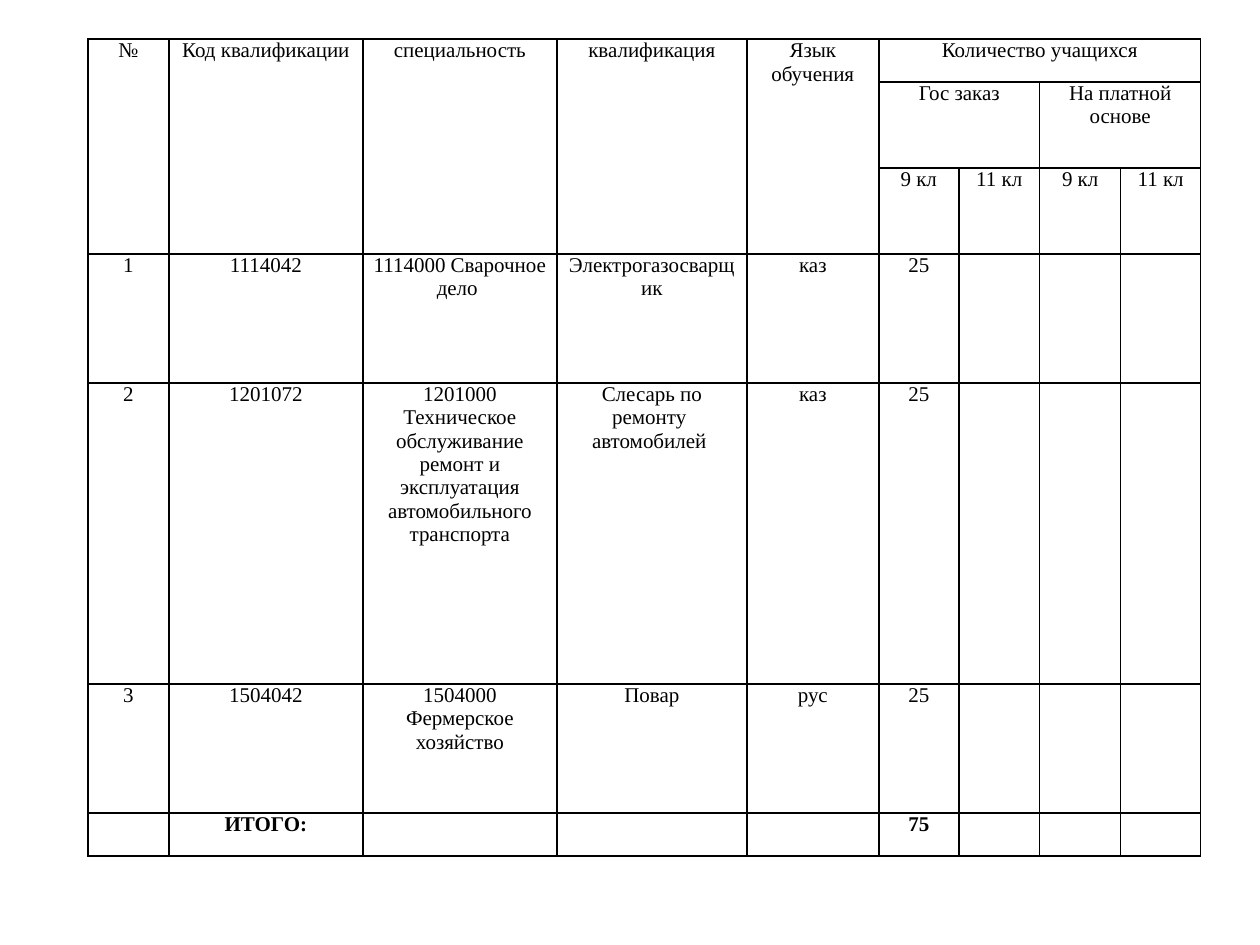
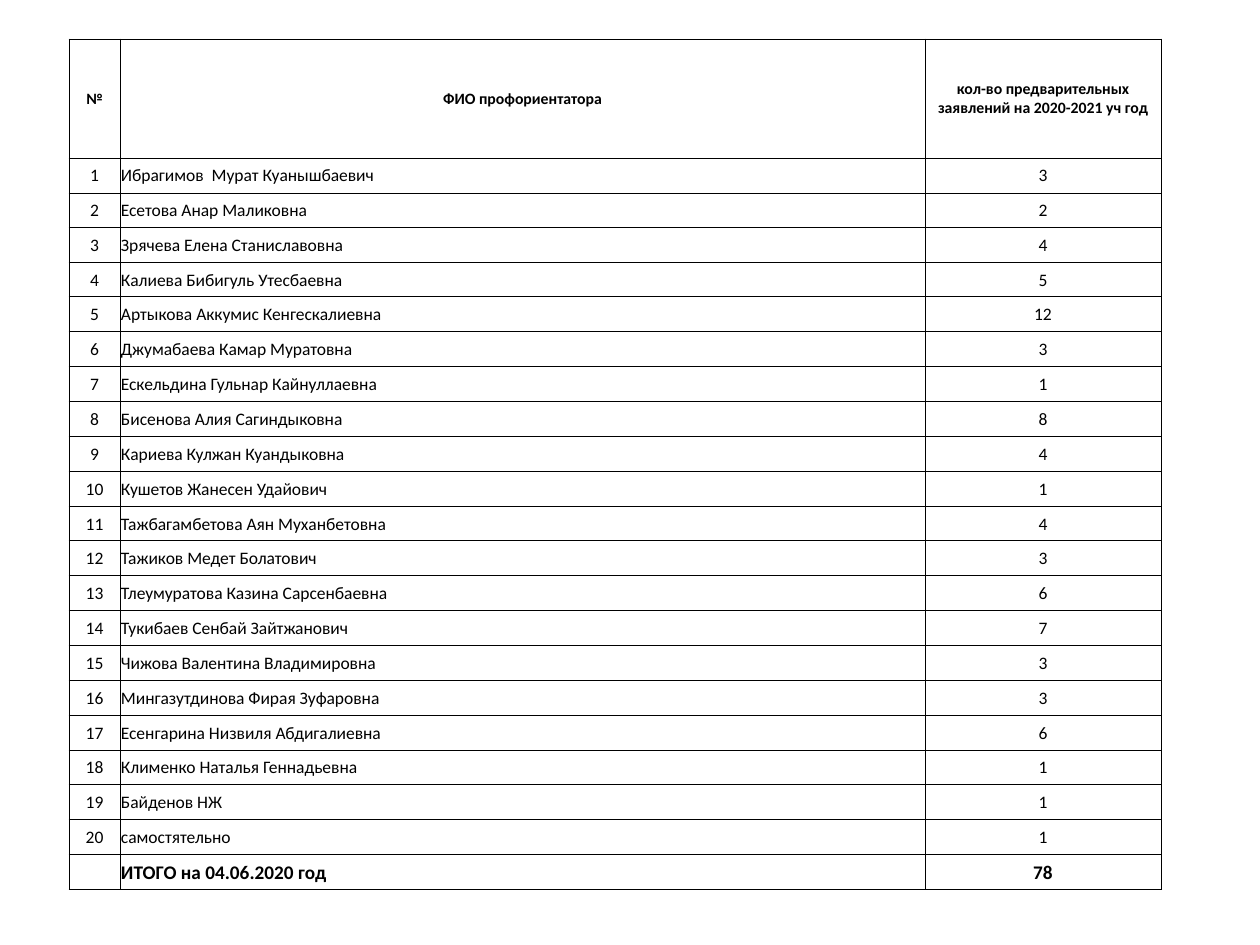
from itertools import product

from lxml.etree import SubElement
from pptx import Presentation
from pptx.dml.color import RGBColor
from pptx.enum.text import MSO_ANCHOR as ANCHOR, PP_ALIGN as ALIGN
from pptx.oxml.ns import qn
from pptx.util import Emu, Pt

SLIDE_W, SLIDE_H = 1260, 945
BLACK, WHITE = "000000", "FFFFFF"

PLAN_BOX = (88, 39, 1113, 817)
PLAN_COLS = [81, 194, 194, 190, 132]
PLAN_ROWS = [43, 86, 86, 129, 301, 129, 43]
PLAN_MERGES = [(0, c, 2, c) for c in range(5)] + [
    (0, 5, 0, 8), (1, 5, 1, 6), (1, 7, 1, 8)]
PLAN = [
    ["№", "Код квалификации", "специальность", "квалификация",
     "Язык обучения", "Количество учащихся"],
    ["", "", "", "", "", "Гос заказ", "", "На платной основе"],
    ["", "", "", "", "", "9 кл", "11 кл", "9 кл", "11 кл"],
    ["1", "1114042", "1114000 Сварочное дело ", "Электрогазосварщик",
     "каз", "25"],
    ["2", "1201072",
     "1201000 Техническое обслуживание\n"
     "ремонт и эксплуатация автомобильного транспорта",
     "Слесарь по ремонту \nавтомобилей ", "каз", "25"],
    ["3", "1504042", "1504000 Фермерское хозяйство", "Повар", "рус", "25"],
    ["", "ИТОГО:", "", "", "", "75"],
]
PLAN_STYLE = {"font": "Times New Roman", "line": 1, "anchor": ANCHOR.TOP,
              "margins": (9, 0, 9, 0)}

LIST_BOX = (69, 39, 1092, 851)
LIST_COLS = [51, 805]
LIST_HEAD = 119
APPLICATIONS = [
    ("Ибрагимов  Мурат Куанышбаевич", 3),
    ("Есетова Анар Маликовна", 2),
    ("Зрячева Елена Станиславовна", 4),
    ("Калиева Бибигуль Утесбаевна", 5),
    ("Артыкова Аккумис Кенгескалиевна", 12),
    ("Джумабаева Камар Муратовна", 3),
    ("Ескельдина Гульнар Кайнуллаевна", 1),
    ("Бисенова Алия Сагиндыковна", 8),
    ("Кариева Кулжан Куандыковна", 4),
    ("Кушетов Жанесен Удайович", 1),
    ("Тажбагамбетова Аян Муханбетовна", 4),
    ("Тажиков Медет Болатович", 3),
    ("Тлеумуратова Казина Сарсенбаевна", 6),
    ("Тукибаев Сенбай Зайтжанович", 7),
    ("Чижова Валентина Владимировна", 3),
    ("Мингазутдинова Фирая Зуфаровна", 3),
    ("Есенгарина Низвиля Абдигалиевна", 6),
    ("Клименко Наталья Геннадьевна", 1),
    ("Байденов НЖ", 1),
    ("самостятельно", 1),
]
LIST_STYLE = {"font": "Calibri", "line": 0.5, "anchor": ANCHOR.MIDDLE,
              "margins": (1, 1, 1, 0)}


def px(n):
    return Emu(round(n * 914400 / 126))


def color(value):
    return RGBColor.from_string(value)


def set_attrs(obj, values):
    for name, value in values.items():
        setattr(obj, name, value)


def split_evenly(total, count):
    edges = [round(total * i / count) for i in range(count + 1)]
    return [b - a for a, b in zip(edges, edges[1:])]


def add_borders(cell, width):
    tc_pr = cell._tc.get_or_add_tcPr()
    for side in ("lnL", "lnR", "lnT", "lnB"):
        ln = SubElement(tc_pr, qn(f"a:{side}"), w=str(Pt(width)))
        fill = SubElement(ln, qn("a:solidFill"))
        SubElement(fill, qn("a:srgbClr"), val=BLACK)


def fill_cell(cell, text, style, size, bold, align):
    add_borders(cell, style["line"])
    cell.fill.solid()
    cell.fill.fore_color.rgb = color(WHITE)
    left, top, right, bottom = map(px, style["margins"])
    set_attrs(cell, {"margin_left": left, "margin_top": top,
                     "margin_right": right, "margin_bottom": bottom,
                     "vertical_anchor": style["anchor"]})
    cell.text_frame.text = text
    for p in cell.text_frame.paragraphs:
        p.alignment = align
        for r in p.runs:
            set_attrs(r.font, {"name": style["font"], "size": Pt(size),
                               "bold": bold})
            r.font.color.rgb = color(BLACK)
        if not p.runs:
            end = SubElement(p._p, qn("a:endParaRPr"))
            end.set("sz", str(size * 100))


def add_grid(slide, box, cols, rows):
    table = slide.shapes.add_table(len(rows), len(cols), *map(px, box)).table
    set_attrs(table, {"first_row": False, "horz_banding": False})
    for col, width in zip(table.columns, cols):
        col.width = px(width)
    for row, height in zip(table.rows, rows):
        row.height = px(height)
    return table


def add_plan(slide, box):
    cols = PLAN_COLS + split_evenly(box[2] - sum(PLAN_COLS), 4)
    table = add_grid(slide, box, cols, PLAN_ROWS)
    last = len(PLAN) - 1
    for i, j in product(range(len(PLAN)), range(len(cols))):
        text = PLAN[i][j] if j < len(PLAN[i]) else ""
        fill_cell(table.cell(i, j), text, PLAN_STYLE, 12, i == last,
                  ALIGN.CENTER)
    for top, left, bottom, right in PLAN_MERGES:
        table.cell(top, left).merge(table.cell(bottom, right))


def add_applications(slide, box):
    head = ("№", "ФИО профориентатора",
            "кол-во предварительных заявлений на 2020-2021 уч год")
    body = [(str(i), name, str(count))
            for i, (name, count) in enumerate(APPLICATIONS, 1)]
    total = ("", "ИТОГО на 04.06.2020 год",
             str(sum(count for _, count in APPLICATIONS)))
    lines = [(head, 9, True), *((row, 10, False) for row in body),
             (total, 11, True)]
    cols = LIST_COLS + [box[2] - sum(LIST_COLS)]
    rows = [LIST_HEAD] + split_evenly(box[3] - LIST_HEAD, len(lines) - 1)
    table = add_grid(slide, box, cols, rows)
    for i, (texts, size, bold) in enumerate(lines):
        for j, text in enumerate(texts):
            align = ALIGN.LEFT if i and j == 1 else ALIGN.CENTER
            fill_cell(table.cell(i, j), text, LIST_STYLE, size, bold, align)


def main():
    prs = Presentation()
    set_attrs(prs, {"slide_width": px(SLIDE_W), "slide_height": px(SLIDE_H)})
    blank = prs.slide_layouts[6]
    add_plan(prs.slides.add_slide(blank), PLAN_BOX)
    add_applications(prs.slides.add_slide(blank), LIST_BOX)
    prs.save("out.pptx")


if __name__ == "__main__":
    main()
